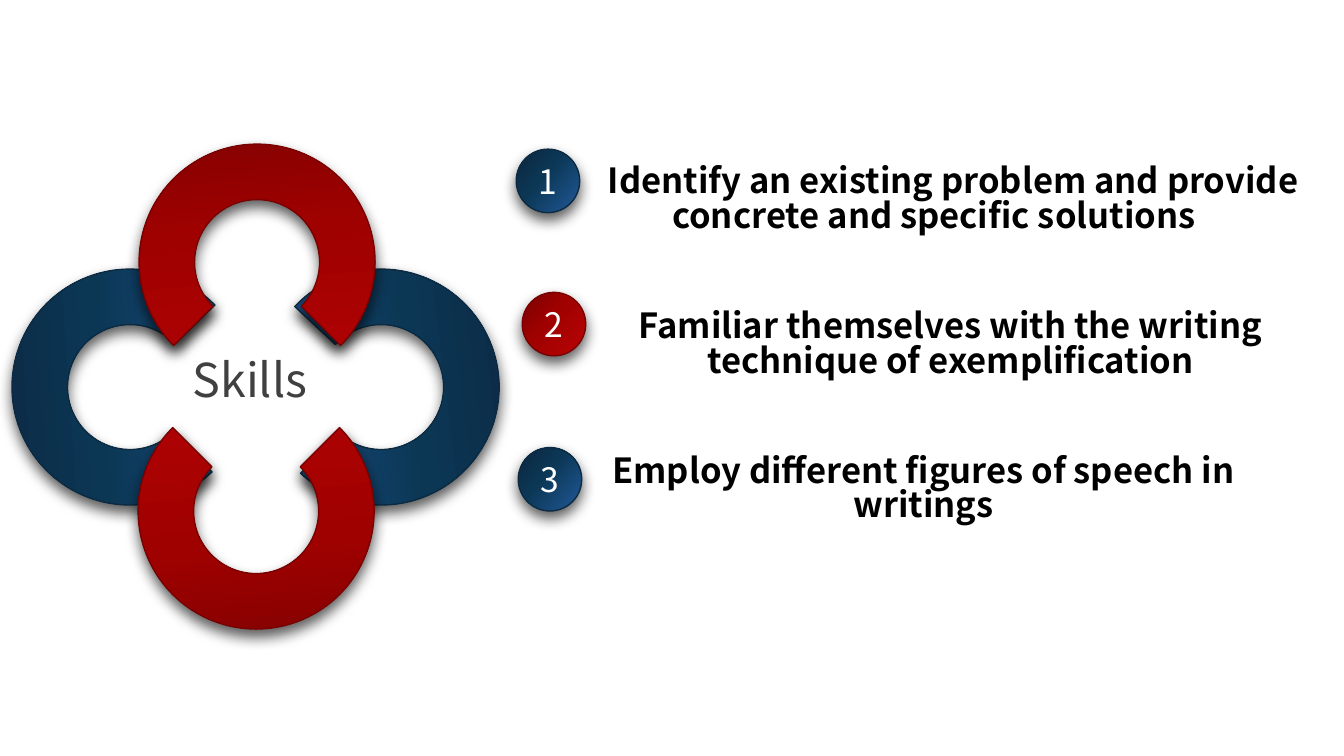
from pptx import Presentation
from pptx.dml.color import RGBColor
from pptx.enum.shapes import MSO_SHAPE as Shape
from pptx.enum.text import MSO_ANCHOR as Anchor, MSO_AUTO_SIZE as AutoSize, PP_ALIGN as Align
from pptx.oxml import parse_xml
from pptx.util import Inches, Pt

FONT = "Noto Sans CJK SC"
WHITE = RGBColor(0xFF, 0xFF, 0xFF)
BLACK = RGBColor(0x00, 0x00, 0x00)
GREY = RGBColor(0x40, 0x40, 0x40)
NAVY_LINE = RGBColor(0x0C, 0x2A, 0x42)
RED_LINE = RGBColor(0x78, 0x02, 0x02)
NAVY = [RGBColor(0x1D, 0x52, 0x8B), RGBColor(0x0B, 0x37, 0x54), RGBColor(0x0D, 0x24, 0x3F)]
RED = [RGBColor(0xB3, 0x03, 0x04), RGBColor(0x9F, 0x01, 0x00), RGBColor(0x78, 0x02, 0x02)]
STOPS = [12, 59, 100]
SPACE = 'xmlns:a="http://schemas.openxmlformats.org/drawingml/2006/main"'

deck = Presentation()
deck.slide_width, deck.slide_height = Inches(13.33), Inches(7.5)
COL, ROW = deck.slide_width / 100, deck.slide_height / 100
page = deck.slides.add_slide(deck.slide_layouts[5])


def add_glossy(preset, left, top, size, colours, edge):
    shape = page.shapes.add_shape(preset, int(left * COL), int(top * ROW), size, size)
    stops = "".join(
        f'<a:gs pos="{stop * 1000}"><a:srgbClr val="{colour}"/></a:gs>'
        for stop, colour in zip(STOPS, colours))
    properties = shape.element.spPr
    properties.insert(2, parse_xml(
        f'<a:gradFill {SPACE} rotWithShape="1"><a:gsLst>{stops}</a:gsLst>'
        '<a:lin ang="13200000" scaled="0"/></a:gradFill>'))
    shape.line.color.rgb = edge
    shape.line.width = Pt(1)
    properties.append(parse_xml(
        f'<a:effectLst {SPACE}><a:outerShdw blurRad="{Pt(10)}" dist="{Pt(5)}" dir="5400000"'
        ' algn="t" rotWithShape="0"><a:srgbClr val="000000"><a:alpha val="63000"/></a:srgbClr>'
        '</a:outerShdw></a:effectLst>'))
    return shape


def write(shape, text, frame_format, para_format, font_format):
    frame = shape.text_frame
    para = frame.paragraphs[0]
    span = para.add_run()
    span.text = text
    span.font.color.rgb = font_format["colour"]
    formats = [(frame, frame_format), (para, para_format),
               (span.font, {"name": FONT, "size": Pt(font_format["size"]),
                            "bold": font_format["bold"]})]
    for target, values in formats:
        for name, value in values.items():
            setattr(target, name, value)
    return para


NO_MARGINS = dict.fromkeys(["margin_left", "margin_top", "margin_right", "margin_bottom"], 0)

rings = [
    (0.9, 35.6, 316, NAVY, NAVY_LINE),
    (19.58, 35.6, 133, NAVY, NAVY_LINE),
    (10.35, 19.07, 45, RED, RED_LINE),
    (10.28, 52, 225, RED, RED_LINE),
]
for left, top, turn, colours, edge in rings:
    ring = add_glossy(Shape.BLOCK_ARC, left, top, Inches(2.34), colours, edge)
    ring.rotation = turn
    for index, value in enumerate([54, 0, 0.235]):
        ring.adjustments[index] = value

title = page.shapes.title
title.left, title.top = int(14.33 * COL), int(47.6 * ROW)
title.width, title.height = int(12.08 * COL), int(7.47 * ROW)
write(title, "Skills",
      {**NO_MARGINS, "auto_size": AutoSize.NONE, "vertical_anchor": Anchor.TOP, "word_wrap": True},
      {"alignment": Align.LEFT, "line_spacing": 0.83},
      {"size": 33.3, "colour": GREY, "bold": False})

skills = [
    ("Identify an existing problem and provide concrete and specific solutions",
     (38.41, 19.73), (39.01, 21.33, 60.99, 11.6), 0.38, NAVY, NAVY_LINE),
    ("Familiar themselves with the writing technique of exemplification",
     (38.86, 38.67), (41.48, 40.53, 58.51, 10.8), 0, RED, RED_LINE),
    ("Employ different figures of speech in writings",
     (38.56, 59.2), (42.46, 59.6, 52.51, 11.6), 0, NAVY, NAVY_LINE),
]
for number, (text, spot, area, indent, colours, edge) in enumerate(skills, 1):
    badge = add_glossy(Shape.OVAL, *spot, Inches(0.63), colours, edge)
    write(badge, str(number),
          {**NO_MARGINS, "vertical_anchor": Anchor.MIDDLE, "word_wrap": False},
          {"alignment": Align.CENTER}, {"size": 24, "colour": WHITE, "bold": False})
    left, top, width, height = area
    box = page.shapes.add_textbox(int(left * COL), int(top * ROW),
                                  int(width * COL), int(height * ROW))
    para = write(box, text, {"word_wrap": True},
                 {"alignment": Align.CENTER, "line_spacing": 0.83},
                 {"size": 24.7, "colour": BLACK, "bold": True})
    if indent:
        para._p.get_or_add_pPr().set("indent", str(Inches(indent)))

deck.save("out.pptx")
